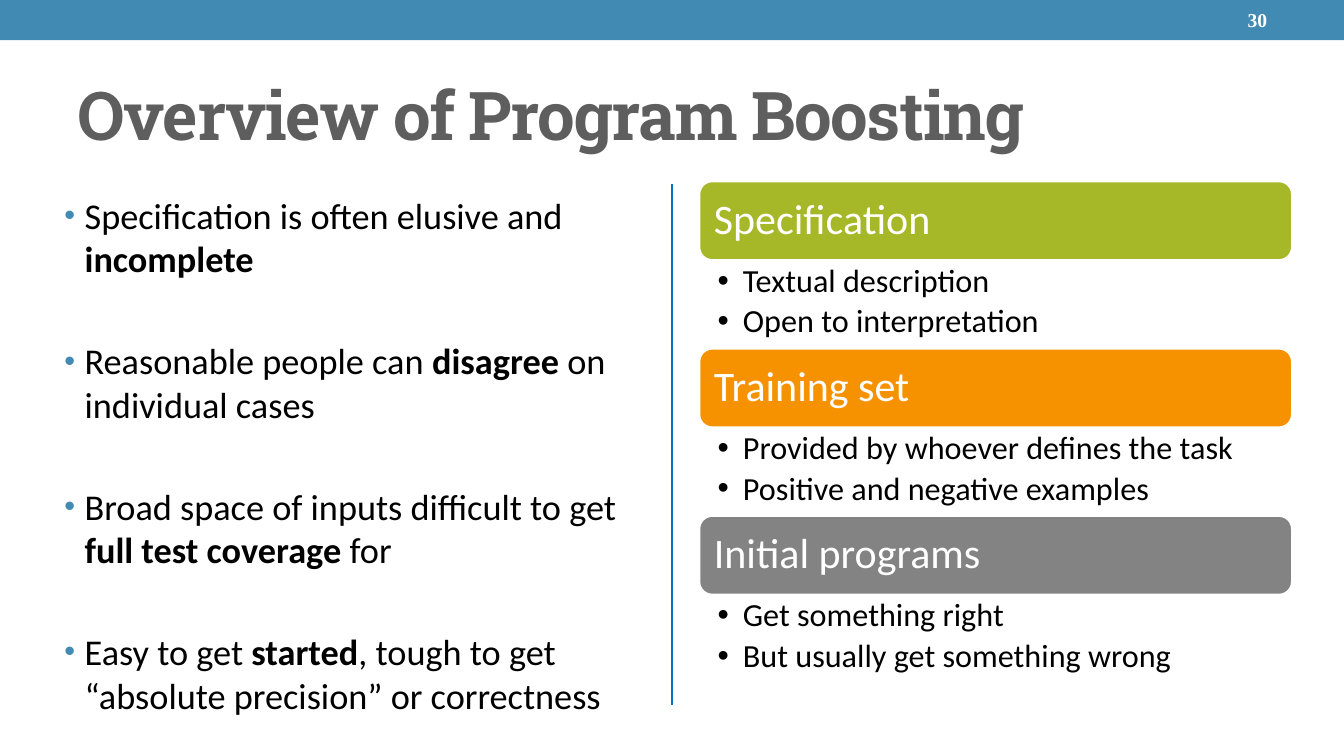
from lxml import etree
from pptx import Presentation
from pptx.dml.color import RGBColor
from pptx.enum import shapes, text
from pptx.oxml import ns
from pptx.util import Pt

BLUE = RGBColor(0x41, 0x8A, 0xB3)
DIVIDER_BLUE = RGBColor(0x00, 0x70, 0xC0)
GREEN = RGBColor(0xA6, 0xB7, 0x27)
ORANGE = RGBColor(0xF6, 0x92, 0x00)
GRAY = RGBColor(0x83, 0x83, 0x83)
TITLE_GRAY = RGBColor(0x5E, 0x5E, 0x5E)
BLACK = RGBColor(0, 0, 0)
WHITE = RGBColor(0xFF, 0xFF, 0xFF)

TITLE_FONT = {"name": "Roboto Slab", "size": Pt(48), "bold": True}
NUMBER_FONT = {"name": "Times New Roman", "size": Pt(14), "bold": True}
POINT_FONT = {"name": "Calibri", "size": Pt(25.9)}
HEADING_FONT = {"name": "Calibri", "size": Pt(30)}
DETAIL_FONT = {"name": "Calibri", "size": Pt(23)}

# Each point is a list of (wording, bold) pieces.
POINTS = [
    [("Specification is often elusive and ", False), ("incomplete", True)],
    [("Reasonable people can ", False), ("disagree ", True),
     ("on individual cases", False)],
    [("Broad space of inputs difficult to get ", False),
     ("full test coverage ", True), ("for", False)],
    [("Easy to get ", False), ("started", True),
     (", tough to get “absolute precision” or correctness", False)],
]
INGREDIENTS = [
    ("Specification", GREEN, ["Textual description", "Open to interpretation"]),
    ("Training set", ORANGE,
     ["Provided by whoever defines the task", "Positive and negative examples"]),
    ("Initial programs", GRAY,
     ["Get something right", "But usually get something wrong"]),
]


def set_all(target, values):
    for attribute, value in values.items():
        setattr(target, attribute, value)


def points(*lengths):
    return [Pt(length) for length in lengths]


def set_frame(frame, anchor, margins=(7.2, 3.6, 7.2, 3.6)):
    left, top, right, bottom = points(*margins)
    set_all(frame, {"word_wrap": True, "auto_size": text.MSO_AUTO_SIZE.NONE,
                    "vertical_anchor": anchor,
                    "margin_left": left, "margin_top": top,
                    "margin_right": right, "margin_bottom": bottom})


def add_run(paragraph, wording, font, color):
    run = paragraph.add_run()
    run.text = wording
    set_all(run.font, font)
    run.font.color.rgb = color
    return run


def paragraphs(frame, count):
    return [frame.paragraphs[0]] + [frame.add_paragraph() for _ in range(count - 1)]


def set_bullet(paragraph, indent, color=None, percent=100):
    properties = paragraph._p.get_or_add_pPr()
    properties.set("marL", str(Pt(indent)))
    properties.set("indent", str(-Pt(indent)))
    if color is not None:
        holder = etree.SubElement(properties, ns.qn("a:buClr"))
        etree.SubElement(holder, ns.qn("a:srgbClr"), val=str(color))
    etree.SubElement(properties, ns.qn("a:buSzPct"), val=str(percent * 1000))
    etree.SubElement(properties, ns.qn("a:buFont"), typeface="Arial")
    etree.SubElement(properties, ns.qn("a:buChar"), char="•")


def add_top_bar(slide, left, top, width, height):
    bar = slide.shapes.add_shape(shapes.MSO_SHAPE.RECTANGLE,
                                 *points(left, top, width, height))
    bar.shadow.inherit = False
    bar.fill.solid()
    bar.fill.fore_color.rgb = BLUE
    bar.line.fill.background()
    number = slide.shapes.add_textbox(
        *points(left + width - 160, top + 1.4, 112.3, height - 2.8)).text_frame
    set_frame(number, text.MSO_ANCHOR.MIDDLE)
    number.paragraphs[0].alignment = text.PP_ALIGN.RIGHT
    add_run(number.paragraphs[0], "30", NUMBER_FONT, WHITE)


def fill_title(slide, left, top, width, height):
    title = slide.shapes.title
    box = points(left, top, width, height)
    set_all(title, dict(zip(("left", "top", "width", "height"), box)))
    set_frame(title.text_frame, text.MSO_ANCHOR.MIDDLE)
    heading = title.text_frame.paragraphs[0]
    heading.alignment = text.PP_ALIGN.LEFT
    run = add_run(heading, "Overview of Program Boosting", TITLE_FONT, TITLE_GRAY)
    run.font._element.set("spc", "-100")


def add_divider(slide, x, top, bottom):
    divider = slide.shapes.add_connector(shapes.MSO_CONNECTOR.STRAIGHT,
                                         *points(x, top, x, bottom))
    divider.line.color.rgb = DIVIDER_BLUE
    divider.line.width = Pt(1.5)
    etree.SubElement(divider._element.spPr, ns.qn("a:effectLst"))


def add_points(slide, left, top, width, height):
    frame = slide.shapes.add_textbox(*points(left, top, width, height)).text_frame
    set_frame(frame, text.MSO_ANCHOR.TOP)
    for paragraph, pieces in zip(paragraphs(frame, len(POINTS)), POINTS):
        set_all(paragraph, {"line_spacing": Pt(31), "space_after": Pt(41.8)})
        set_bullet(paragraph, 14.4, BLUE, 85)
        for wording, bold in pieces:
            add_run(paragraph, wording, POINT_FONT | {"bold": bold}, BLACK)


def add_ingredient(slide, left, top, width, height, ingredient):
    """Draw a coloured heading band with its bulleted details below."""
    name, color, details = ingredient
    band_height = 56.9
    band = slide.shapes.add_shape(shapes.MSO_SHAPE.ROUNDED_RECTANGLE,
                                  *points(left, top, width, band_height))
    band.shadow.inherit = False
    band.fill.solid()
    band.fill.fore_color.rgb = color
    band.line.color.rgb = WHITE
    band.line.width = Pt(2.08)
    set_frame(band.text_frame, text.MSO_ANCHOR.MIDDLE, (8, 8, 8, 8))
    heading = band.text_frame.paragraphs[0]
    set_all(heading, {"alignment": text.PP_ALIGN.LEFT, "line_spacing": 0.9})
    add_run(heading, name, HEADING_FONT, WHITE)

    frame = slide.shapes.add_textbox(
        *points(left, top + band_height, width, height - band_height)).text_frame
    set_frame(frame, text.MSO_ANCHOR.TOP, (13.5, 2.9, 16.5, 2.9))
    for paragraph, detail in zip(paragraphs(frame, len(details)), details):
        set_all(paragraph, {"line_spacing": 0.9, "space_after": Pt(4)})
        set_bullet(paragraph, 18)
        add_run(paragraph, detail, DETAIL_FONT, BLACK)


def add_ingredients(slide, left, top, width, height):
    step = height / len(INGREDIENTS)
    for index, ingredient in enumerate(INGREDIENTS):
        add_ingredient(slide, left, top + index * step, width, step, ingredient)


def main():
    deck = Presentation()
    set_all(deck, {"slide_width": Pt(960), "slide_height": Pt(540)})
    slide = deck.slides.add_slide(deck.slide_layouts[5])
    add_top_bar(slide, 0, 0, 960, 28.8)
    fill_title(slide, 48, 42, 864, 78)
    add_divider(slide, 480, 131.5, 503.5)
    add_points(slide, 39, 134.6, 424, 371.5)
    add_ingredients(slide, 499.2, 129.2, 424, 358.5)
    deck.save("out.pptx")


if __name__ == "__main__":
    main()
